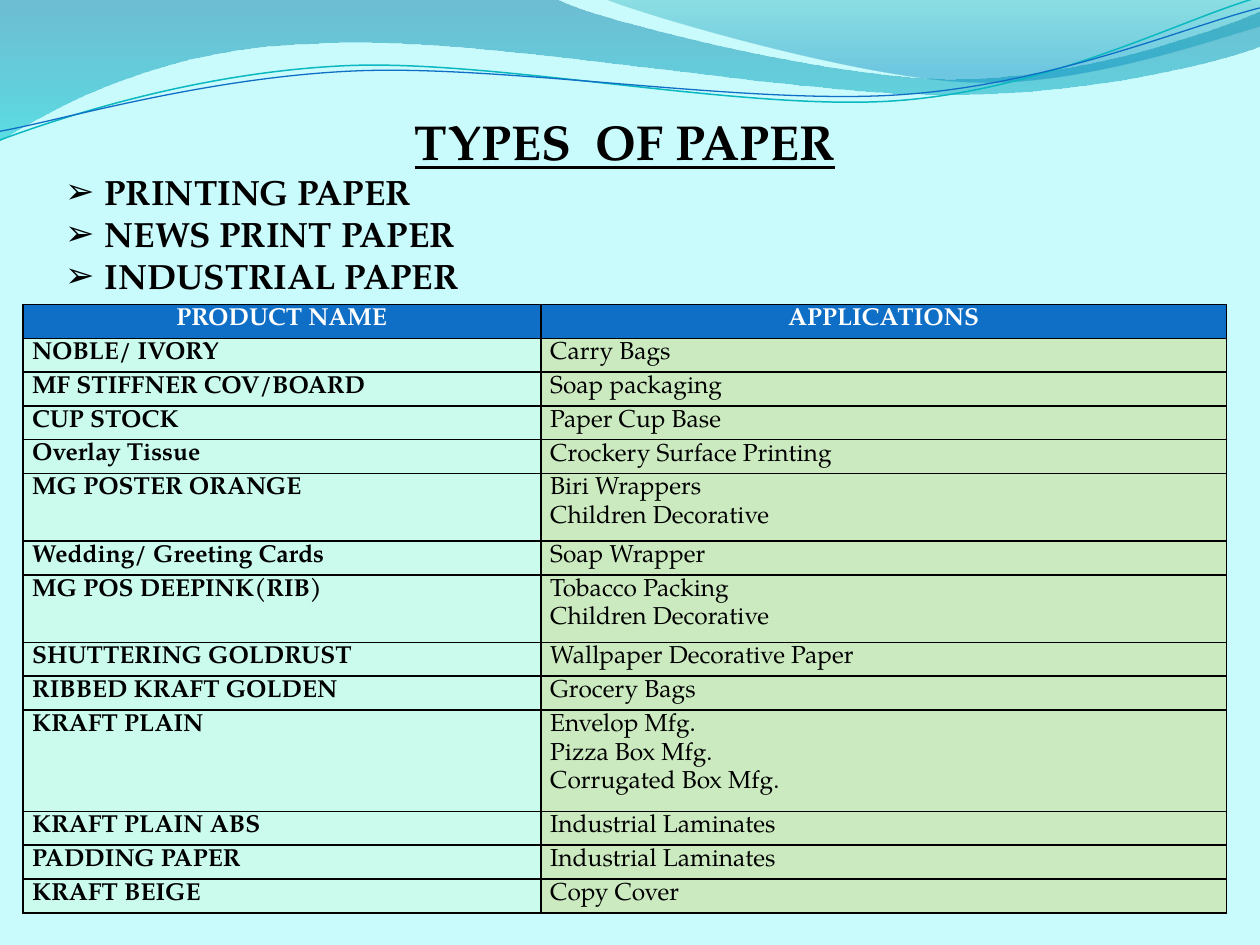
from lxml import etree
from pptx import Presentation
from pptx.dml.color import RGBColor
from pptx.enum.text import MSO_ANCHOR, MSO_AUTO_SIZE, PP_ALIGN
from pptx.oxml.ns import qn
from pptx.util import Pt

CENTER, LEFT = PP_ALIGN.CENTER, PP_ALIGN.LEFT
TOP = MSO_ANCHOR.TOP
NO_AUTOFIT = MSO_AUTO_SIZE.NONE
FONT = "TeX Gyre Pagella"
INK, WHITE, BLUE, TEAL = "000000", "FFFFFF", "0F6FC6", "0AB8BF"
PALE, MINT, GREEN = "C9FAFC", "CAFBED", "CBEAC0"
ROW_UNIT = 19.33

PAPERS = ["PRINTING PAPER", "NEWS PRINT PAPER", "INDUSTRIAL PAPER"]
PRODUCTS = [
    ("NOBLE/ IVORY", ["Carry Bags"]),
    ("MF STIFFNER COV/BOARD", ["Soap packaging"]),
    ("CUP STOCK", ["Paper Cup Base"]),
    ("Overlay Tissue", ["Crockery Surface Printing"]),
    ("MG POSTER ORANGE", ["Biri Wrappers", "Children Decorative"]),
    ("Wedding/ Greeting Cards", ["Soap Wrapper"]),
    ("MG POS DEEPINK(RIB)", ["Tobacco Packing", "Children Decorative"]),
    ("SHUTTERING GOLDRUST", ["Wallpaper Decorative Paper"]),
    ("RIBBED KRAFT GOLDEN", ["Grocery Bags"]),
    ("KRAFT PLAIN", ["Envelop Mfg.", "Pizza Box Mfg.", "Corrugated Box Mfg."]),
    ("KRAFT PLAIN ABS", ["Industrial Laminates"]),
    ("PADDING PAPER", ["Industrial Laminates"]),
    ("KRAFT BEIGE", ["Copy Cover"]),
]

BACK_WAVE = [(0, 0), (317, -1),
             (343, 12, 478, 45, 546, 45), (614, 45, 690, 19, 720, 6.5),
             (721, 26), (708, 32, 626, 55, 537, 54),
             (447, 54, 275, 20, 185, 24.5), (93, 26, 33, 60, -1, 81)]
FRONT_WAVE = [(345, -1), (366, 8, 491, 45, 554, 47),
              (616, 50, 692, 23, 720, 15), (720, 0)]
TEAL_LINE = [(0, 80), (35, 67, 114, 41, 199, 37.5),
             (284, 34, 427, 64, 513, 57.5), (600, 51, 675, 11, 719, -1.5)]
BLUE_LINE = [(0, 75), (34, 69, 118, 44, 204, 40.5),
             (290, 37, 430, 60.5, 516, 54), (602, 48, 678, 15, 720, 4.5)]


def color(hex_text):
    return RGBColor.from_string(hex_text)


def bend_segments(wave, segments):
    lines = wave._element.spPr.iter(qn("a:lnTo"))
    remaining = iter(list(lines))
    for segment in segments[1:]:
        first = next(remaining)
        if len(segment) == 2:
            continue
        curve = etree.Element(qn("a:cubicBezTo"))
        first.addprevious(curve)
        for line in (first, next(remaining), next(remaining)):
            curve.append(line[0])
            line.getparent().remove(line)


def add_wave(slide, left, top, segments, closed):
    points = [(Pt(left + segment[i]), Pt(top + segment[i + 1]))
              for segment in segments for i in range(0, len(segment), 2)]
    builder = slide.shapes.build_freeform(*points[0])
    builder.add_line_segments(points[1:], close=closed)
    wave = builder.convert_to_shape()
    bend_segments(wave, segments)
    wave.shadow.inherit = False
    return wave


def add_waves(slide, left, top):
    for segments, stops in (
            (BACK_WAVE, [(0, "0074A1", 45), (1, "00C6CF", 55)]),
            (FRONT_WAVE, [(0, "00A1A9", 30), (0.8, "008BBF", 45)])):
        wave = add_wave(slide, left, top, segments, True)
        wave.line.fill.background()
        wave.fill.gradient()
        wave.fill.gradient_angle = 270
        for stop, (position, tint, _) in zip(wave.fill.gradient_stops, stops):
            stop.position = position
            stop.color.rgb = color(tint)
        tints = wave._element.spPr.iter(qn("a:srgbClr"))
        for tint, (_, _, opacity) in zip(tints, stops):
            etree.SubElement(tint, qn("a:alpha"), val=str(opacity * 1000))
    for segments, tint, width in ((TEAL_LINE, TEAL, 0.85), (BLUE_LINE, BLUE, 0.75)):
        wave = add_wave(slide, left, top, segments, False)
        wave.fill.background()
        wave.line.color.rgb = color(tint)
        wave.line.width = Pt(width)


def write(paragraph, text, size, tint=INK, bold=True, align=LEFT):
    paragraph.alignment = align
    run = paragraph.add_run()
    run.text = text
    run.font.name = FONT
    run.font.size = Pt(size)
    run.font.bold = bold
    run.font.color.rgb = color(tint)
    return run


def place(holder, left, top, width, height):
    holder.left, holder.top = Pt(left), Pt(top)
    holder.width, holder.height = Pt(width), Pt(height)
    frame = holder.text_frame
    frame.auto_size = NO_AUTOFIT
    frame.word_wrap = True
    frame.vertical_anchor = TOP
    frame.margin_top = frame.margin_bottom = 0
    return frame


def fill_heading(slide, left, top, width):
    title = place(slide.shapes.title, left, top, width, 34)
    write(title.paragraphs[0], "TYPES  OF PAPER", 28, align=CENTER).font.underline = True
    papers = place(slide.placeholders[1], left, top + 34, width, 76)
    for index, name in enumerate(PAPERS):
        item = papers.add_paragraph() if index else papers.paragraphs[0]
        item.space_before = Pt(0)
        write(item, name, 20)
        properties = item._p.get_or_add_pPr()
        properties.set("marL", str(Pt(22.5)))
        properties.set("indent", str(Pt(-22.5)))
        etree.SubElement(properties, qn("a:buChar"), char="➢")


def add_borders(cell):
    properties = cell._tc.get_or_add_tcPr()
    for index, side in enumerate(("lnL", "lnR", "lnT", "lnB")):
        border = etree.Element(qn(f"a:{side}"), w=str(Pt(1)))
        fill = etree.SubElement(border, qn("a:solidFill"))
        etree.SubElement(fill, qn("a:srgbClr"), val=INK)
        properties.insert(index, border)


def fill_cell(cell, lines, fill, tint=INK, bold=True, align=LEFT):
    cell.margin_left = cell.margin_right = Pt(5.4)
    cell.margin_top = cell.margin_bottom = 0
    cell.fill.solid()
    cell.fill.fore_color.rgb = color(fill)
    add_borders(cell)
    for index, line in enumerate(lines):
        paragraph = cell.text_frame.add_paragraph() if index else cell.text_frame.paragraphs[0]
        paragraph.line_spacing = 1.15
        write(paragraph, line, 14, tint, bold, align)


def add_product_table(slide, left, top, width):
    units = [1] + [len(uses) for _, uses in PRODUCTS]
    table = slide.shapes.add_table(len(units), 2, Pt(left), Pt(top), Pt(width),
                                   Pt(ROW_UNIT * sum(units))).table
    table.columns[0].width = Pt(296)
    table.columns[1].width = Pt(width - 296)
    for row, count in zip(table.rows, units):
        row.height = Pt(ROW_UNIT * count)
    for column, heading in enumerate(("PRODUCT NAME", "APPLICATIONS")):
        fill_cell(table.cell(0, column), [heading], BLUE, WHITE, align=CENTER)
    for row, (product, uses) in enumerate(PRODUCTS, 1):
        fill_cell(table.cell(row, 0), [product], MINT)
        fill_cell(table.cell(row, 1), uses, GREEN, bold=False)


def main():
    deck = Presentation()
    deck.slide_width, deck.slide_height = Pt(720), Pt(540)
    slide = deck.slides.add_slide(deck.slide_layouts[1])
    slide.background.fill.solid()
    slide.background.fill.fore_color.rgb = color(PALE)
    add_waves(slide, 0, 0)
    fill_heading(slide, 30, 63.5, 654)
    add_product_table(slide, 13, 174, 688)
    deck.save("out.pptx")


if __name__ == "__main__":
    main()
